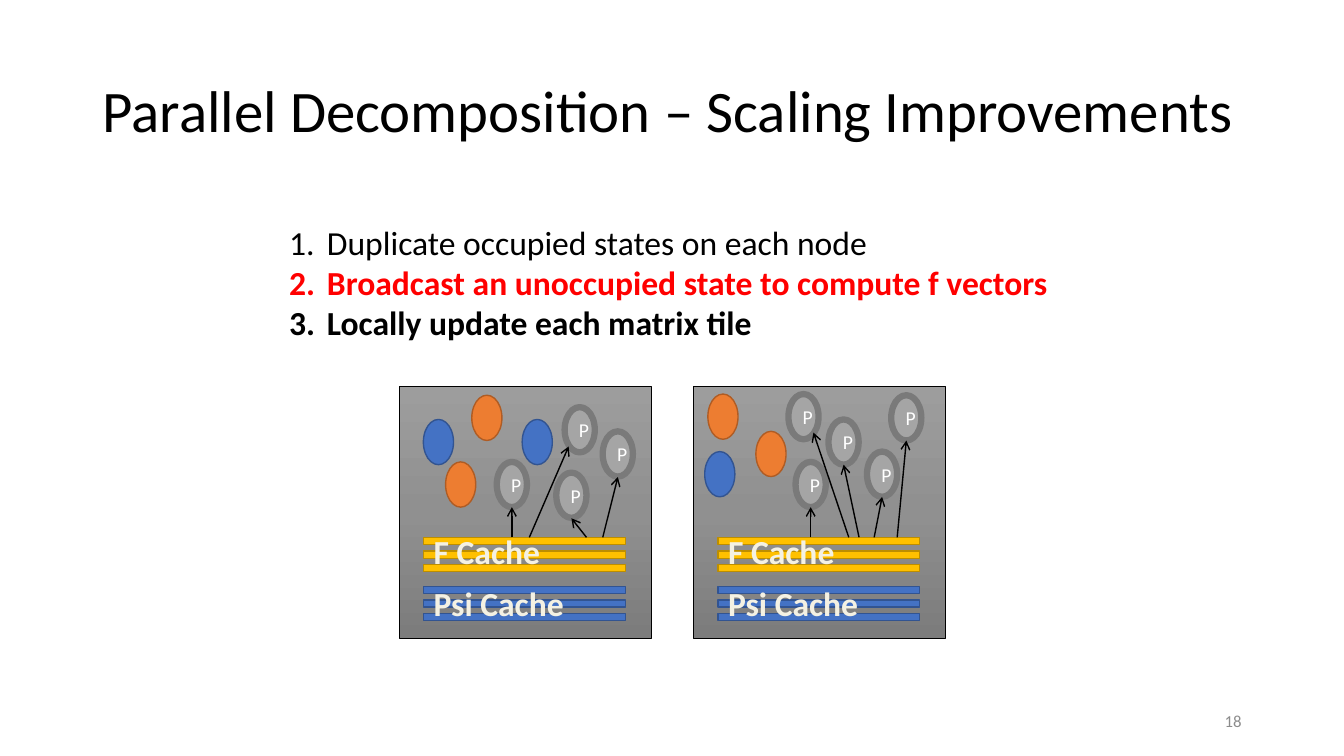
from copy import deepcopy
from dataclasses import dataclass

from lxml.etree import SubElement
from pptx import Presentation
from pptx.dml.color import RGBColor
from pptx.enum.shapes import MSO_CONNECTOR, MSO_SHAPE
from pptx.enum.text import MSO_ANCHOR, MSO_AUTO_SIZE, PP_ALIGN
from pptx.oxml.ns import qn
from pptx.shapes.autoshape import Shape
from pptx.util import Cm, Pt

FONT = "Calibri"
HUES = {
    "black": "000000", "white": "FFFFFF", "red": "FF0000", "page": "8C8C8C",
    "blue": "4472C4", "navy": "325491", "orange": "ED7D31", "rust": "AF5C24",
    "gray": "A5A5A5", "steel": "7A7A7A", "gold": "FFC000", "bronze": "BD8E00",
    "light": "9D9D9D", "mid": "909090", "dark": "7C7C7C",
    "cream": "F4F1E3", "ink": "054697", "plum": "403152",
}
SIDE, TOP = 6.35, 9.73
EDGE = 3.81


@dataclass
class Style:
    fill: str
    line: str
    width: float = 1
    text: str = ""


@dataclass
class Cache:
    name: str
    style: Style
    top: float
    label: float
    width: float
    rim: str


@dataclass
class Node:
    left: float
    full: list[tuple[float, float]]
    empty: list[tuple[float, float]]
    procs: list[tuple[float, float]]
    links: list[tuple[float, float, float]]


BLUE = Style("blue", "navy")
ORANGE = Style("orange", "rust")
PROC = Style("gray", "steel", 4.5, "P")
CACHES = [
    Cache("Psi Cache", BLUE, 5.05, 4.83, 3.84, "ink"),
    Cache("F Cache", Style("gold", "bronze"), 3.82, 3.53, 3.23, "plum"),
]
NODES = [
    Node(10.06,
         [(0.61, 0.84), (3.1, 0.84)],
         [(1.83, 0.23), (1.17, 1.91)],
         [(4.17, 0.53), (5.13, 1.14), (2.46, 1.91), (3.96, 2.18)],
         [(2.84, 2.84, 3.05), (3.28, 4.27, 1.52), (4.72, 4.34, 3.33),
          (5.13, 5.51, 2.29)]),
    Node(17.48,
         [(0.28, 1.65)],
         [(0.36, 0.2), (1.57, 1.14)],
         [(3.4, 0.84), (4.98, 0.23), (2.57, 1.91), (4.37, 1.65), (2.39, 0.2)],
         [(2.95, 2.95, 3.05), (3.91, 3.02, 1.17), (4.17, 3.78, 1.98),
          (4.55, 4.75, 2.79), (5.13, 5.36, 1.37)]),
]
STEPS = [
    ("Duplicate occupied states on each node", "black", False),
    ("Broadcast an unoccupied state to compute f vectors", "red", True),
    ("Locally update each matrix tile", "black", True),
]

deck = Presentation()
deck.slide_width, deck.slide_height = Cm(33.87), Cm(19.05)
slide = deck.slides.add_slide(deck.slide_layouts[5])
shapes = slide.shapes


def hue(name: str) -> RGBColor:
    return RGBColor.from_string(HUES[name])


def write(para, text: str, size: float, color: str, bold: bool = False):
    run = para.add_run()
    run.text = text
    run.font.name, run.font.size, run.font.bold = FONT, Pt(size), bold
    run.font.color.rgb = hue(color)
    return run


def box(x: float, y: float, w: float, h: float, wrap: bool = True) -> Shape:
    area = shapes.add_textbox(Cm(x), Cm(y), Cm(w), Cm(h))
    area.text_frame.word_wrap = wrap
    area.text_frame.vertical_anchor = MSO_ANCHOR.MIDDLE
    return area


def draw(kind: MSO_SHAPE, x: float, y: float, w: float, h: float, style: Style) -> Shape:
    shape = shapes.add_shape(kind, Cm(x), Cm(y), Cm(w), Cm(h))
    shape.shadow.inherit = False
    shape.fill.solid()
    shape.fill.fore_color.rgb = hue(style.fill)
    shape.line.color.rgb = hue(style.line)
    shape.line.width = Pt(style.width)
    if style.text:
        para = shape.text_frame.paragraphs[0]
        para.alignment = PP_ALIGN.CENTER
        write(para, style.text, 14, "white")
    return shape


def panel(left: float) -> None:
    shape = draw(MSO_SHAPE.RECTANGLE, left, TOP, SIDE, SIDE, Style("mid", "black", 0.5))
    shape.fill.gradient()
    shape.fill.gradient_angle = 270
    stops = shape._element.spPr.find(".//" + qn("a:gsLst"))
    stops.insert(1, deepcopy(stops[0]))
    for stop, name, pos in zip(shape.fill.gradient_stops, ("light", "mid", "dark"), (0, 0.5, 1)):
        stop.color.rgb = hue(name)
        stop.position = pos


def arrow(x: float, y: float, to_x: float, to_y: float) -> None:
    link = shapes.add_connector(MSO_CONNECTOR.STRAIGHT, Cm(x), Cm(y), Cm(to_x), Cm(to_y))
    link.line.color.rgb = hue("black")
    link.line.width = Pt(1)
    SubElement(link.line._get_or_add_ln(), qn("a:tailEnd"), type="arrow")
    SubElement(link._element.spPr, qn("a:effectLst"))


def label(left: float, cache: Cache) -> None:
    area = box(left + 0.62, TOP + cache.label, cache.width, 1.27, False)
    area.text_frame.auto_size = MSO_AUTO_SIZE.SHAPE_TO_FIT_TEXT
    run = write(area.text_frame.paragraphs[0], cache.name, 24, "cream", True)
    props = run.font._element
    rim = SubElement(props, qn("a:ln"), w=str(Pt(1)))
    SubElement(SubElement(rim, qn("a:solidFill")), qn("a:srgbClr"), val=HUES[cache.rim])
    props.insert(0, rim)


def build(node: Node) -> None:
    panel(node.left)
    for style, spots in ((BLUE, node.full), (ORANGE, node.empty), (PROC, node.procs)):
        for x, y in spots:
            draw(MSO_SHAPE.OVAL, node.left + x, TOP + y, 0.76, 1.14, style)
    for cache in CACHES:
        for row in range(3):
            draw(MSO_SHAPE.RECTANGLE, node.left + 0.62, TOP + cache.top + 0.34 * row,
                 5.08, 0.18, cache.style)
    for x, to_x, to_y in node.links:
        arrow(node.left + x, TOP + EDGE, node.left + to_x, TOP + to_y)
    for cache in CACHES:
        label(node.left, cache)


def head() -> None:
    title = shapes.title
    title.left, title.top, title.width, title.height = Cm(2.33), Cm(1.01), Cm(29.21), Cm(3.68)
    frame = title.text_frame
    frame.auto_size = MSO_AUTO_SIZE.NONE
    frame.vertical_anchor = MSO_ANCHOR.MIDDLE
    para = frame.paragraphs[0]
    para.alignment, para.line_spacing = PP_ALIGN.LEFT, 0.9
    write(para, "Parallel Decomposition – Scaling Improvements", 42, "black")


def steps() -> None:
    frame = box(7.04, 5.46, 19.84, 3.33).text_frame
    frame.vertical_anchor = MSO_ANCHOR.TOP
    frame.auto_size = MSO_AUTO_SIZE.SHAPE_TO_FIT_TEXT
    for rank, (text, color, bold) in enumerate(STEPS):
        para = frame.add_paragraph() if rank else frame.paragraphs[0]
        props = para._p.get_or_add_pPr()
        props.set("marL", str(Cm(0.95)))
        props.set("indent", str(-Cm(0.95)))
        SubElement(props, qn("a:buFont"), typeface=FONT)
        SubElement(props, qn("a:buAutoNum"), type="arabicPeriod")
        write(para, text, 24, color, bold)


def page() -> None:
    para = box(23.92, 17.66, 7.62, 1.01).text_frame.paragraphs[0]
    para.alignment = PP_ALIGN.RIGHT
    write(para, "18", 12, "page")


if __name__ == "__main__":
    head()
    page()
    steps()
    for node in NODES:
        build(node)
    deck.save("out.pptx")
